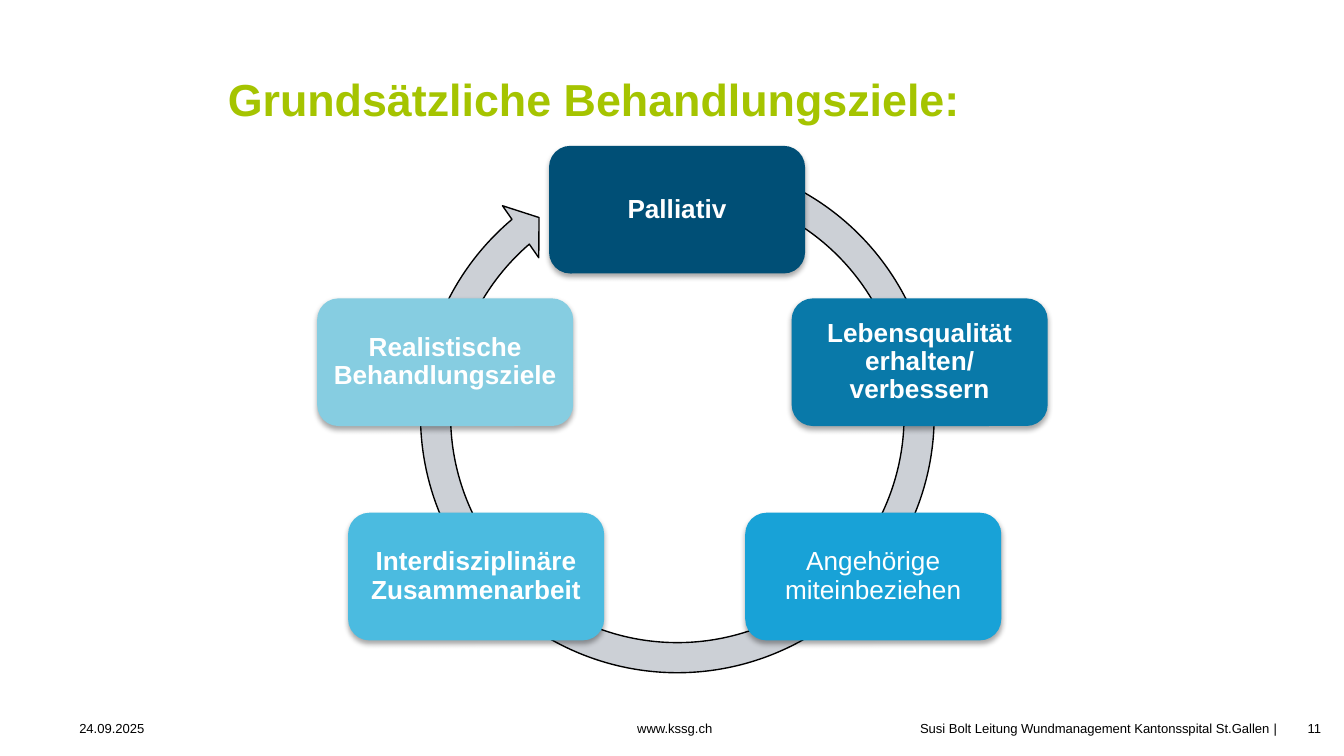
from dataclasses import dataclass

from lxml import etree
from pptx import Presentation
from pptx.dml.color import RGBColor
from pptx.enum.shapes import MSO_SHAPE
from pptx.enum.text import MSO_ANCHOR, MSO_AUTO_SIZE, PP_ALIGN
from pptx.oxml.ns import qn
from pptx.util import Emu, Pt

EMU_PER_PX = 4572
SLIDE_WIDTH, SLIDE_HEIGHT = 2000, 1125
FONT_NAME = "Arial"
TITLE_ONLY_LAYOUT = 5

LEFT, CENTER, RIGHT = PP_ALIGN.LEFT, PP_ALIGN.CENTER, PP_ALIGN.RIGHT
TOP, MIDDLE = MSO_ANCHOR.TOP, MSO_ANCHOR.MIDDLE
NO_AUTO_SIZE = MSO_AUTO_SIZE.NONE
ROUNDED_RECTANGLE = MSO_SHAPE.ROUNDED_RECTANGLE
CIRCULAR_ARROW = MSO_SHAPE.CIRCULAR_ARROW

BLACK = RGBColor(0x00, 0x00, 0x00)
WHITE = RGBColor(0xFF, 0xFF, 0xFF)
GREEN = RGBColor(0xA5, 0xC4, 0x00)
GREY = RGBColor(0xCC, 0xD0, 0xD6)
NAVY = RGBColor(0x00, 0x4F, 0x76)
DARK_BLUE = RGBColor(0x09, 0x79, 0xA9)
BLUE = RGBColor(0x18, 0xA2, 0xD7)
LIGHT_BLUE = RGBColor(0x4B, 0xBB, 0xE0)
PALE_BLUE = RGBColor(0x86, 0xCD, 0xE1)

GOAL_WIDTH, GOAL_HEIGHT, GOAL_INSET = 381, 190, 12
TOP_ROW, MIDDLE_ROW, BOTTOM_ROW = 217, 444, 763
CYCLE_LEFT, CYCLE_TOP, CYCLE_SIZE = 601, 212, 814
CYCLE_ADJUSTMENTS = (0.055, 3.307, 137.763, 173.857, 0.058)
FOOTER_TOP, FOOTER_HEIGHT = 1072, 32


@dataclass(frozen=True)
class Goal:
    text: str
    left: int
    top: int
    color: RGBColor
    bold: bool = True


@dataclass(frozen=True)
class FooterItem:
    text: str
    left: int
    width: int
    alignment: PP_ALIGN = LEFT


GOALS = (
    Goal("Palliativ", 817, TOP_ROW, NAVY),
    Goal("Lebensqualität erhalten/ verbessern", 1178, MIDDLE_ROW, DARK_BLUE),
    Goal("Angehörige miteinbeziehen", 1109, BOTTOM_ROW, BLUE, bold=False),
    Goal("Interdisziplinäre Zusammenarbeit", 518, BOTTOM_ROW, LIGHT_BLUE),
    Goal("Realistische Behandlungsziele", 472, MIDDLE_ROW, PALE_BLUE),
)

FOOTER_ITEMS = (
    FooterItem("24.09.2025", 118, 574),
    FooterItem("www.kssg.ch", 925, 158, CENTER),
    FooterItem("Susi Bolt Leitung Wundmanagement Kantonsspital St.Gallen", 1315, 574, RIGHT),
    FooterItem(" |", 1890, 16),
    FooterItem("11", 1946, 54),
)


def px(length: int) -> Emu:
    return Emu(length * EMU_PER_PX)


def box(left: int, top: int, width: int, height: int) -> tuple[Emu, ...]:
    return px(left), px(top), px(width), px(height)


def write_text(shape, text: str, *, size: int, color: RGBColor, bold: bool = False,
               alignment: PP_ALIGN = LEFT, anchor: MSO_ANCHOR = TOP,
               inset: int = 0, line_spacing: float = 1.0) -> None:
    frame = shape.text_frame
    frame.word_wrap = True
    frame.auto_size = NO_AUTO_SIZE
    frame.vertical_anchor = anchor
    frame.margin_left = frame.margin_right = px(inset)
    frame.margin_top = frame.margin_bottom = px(inset)
    paragraph = frame.paragraphs[0]
    paragraph.alignment = alignment
    paragraph.line_spacing = line_spacing
    run = paragraph.add_run()
    run.text = text
    run.font.name = FONT_NAME
    run.font.size = Pt(size)
    run.font.bold = bold
    run.font.color.rgb = color


def add_soft_shadow(shape) -> None:
    effects = shape._element.spPr.find(qn("a:effectLst"))
    shadow = etree.SubElement(
        effects, qn("a:outerShdw"), blurRad=str(Pt(3.1)), dist=str(Pt(1.8)),
        dir="5400000", algn="t", rotWithShape="0")
    color = etree.SubElement(shadow, qn("a:srgbClr"), val=str(BLACK))
    etree.SubElement(color, qn("a:alpha"), val="35000")


def add_title(slide) -> None:
    title = slide.shapes.title
    title.left, title.top, title.width, title.height = box(339, 106, 1308, 82)
    write_text(title, "Grundsätzliche Behandlungsziele:", size=24, color=GREEN, bold=True)


def add_cycle_arrow(slide) -> None:
    arrow = slide.shapes.add_shape(
        CIRCULAR_ARROW, *box(CYCLE_LEFT, CYCLE_TOP, CYCLE_SIZE, CYCLE_SIZE))
    for index, value in enumerate(CYCLE_ADJUSTMENTS):
        arrow.adjustments[index] = value
    arrow.fill.solid()
    arrow.fill.fore_color.rgb = GREY
    arrow.line.color.rgb = BLACK
    arrow.line.width = Pt(0.75)
    arrow.shadow.inherit = False


def add_goal(slide, goal: Goal) -> None:
    shape = slide.shapes.add_shape(
        ROUNDED_RECTANGLE, *box(goal.left, goal.top, GOAL_WIDTH, GOAL_HEIGHT))
    shape.fill.solid()
    shape.fill.fore_color.rgb = goal.color
    shape.line.fill.background()
    shape.shadow.inherit = False
    add_soft_shadow(shape)
    write_text(shape, goal.text, size=14, color=WHITE, bold=goal.bold,
               alignment=CENTER, anchor=MIDDLE, inset=GOAL_INSET, line_spacing=0.9)


def add_footer_item(slide, item: FooterItem) -> None:
    shape = slide.shapes.add_textbox(
        *box(item.left, FOOTER_TOP, item.width, FOOTER_HEIGHT))
    write_text(shape, item.text, size=7, color=BLACK, alignment=item.alignment)


def main() -> None:
    presentation = Presentation()
    presentation.slide_width = px(SLIDE_WIDTH)
    presentation.slide_height = px(SLIDE_HEIGHT)
    slide = presentation.slides.add_slide(presentation.slide_layouts[TITLE_ONLY_LAYOUT])
    add_title(slide)
    add_cycle_arrow(slide)
    for goal in GOALS:
        add_goal(slide, goal)
    for item in FOOTER_ITEMS:
        add_footer_item(slide, item)
    presentation.save("out.pptx")


if __name__ == "__main__":
    main()
